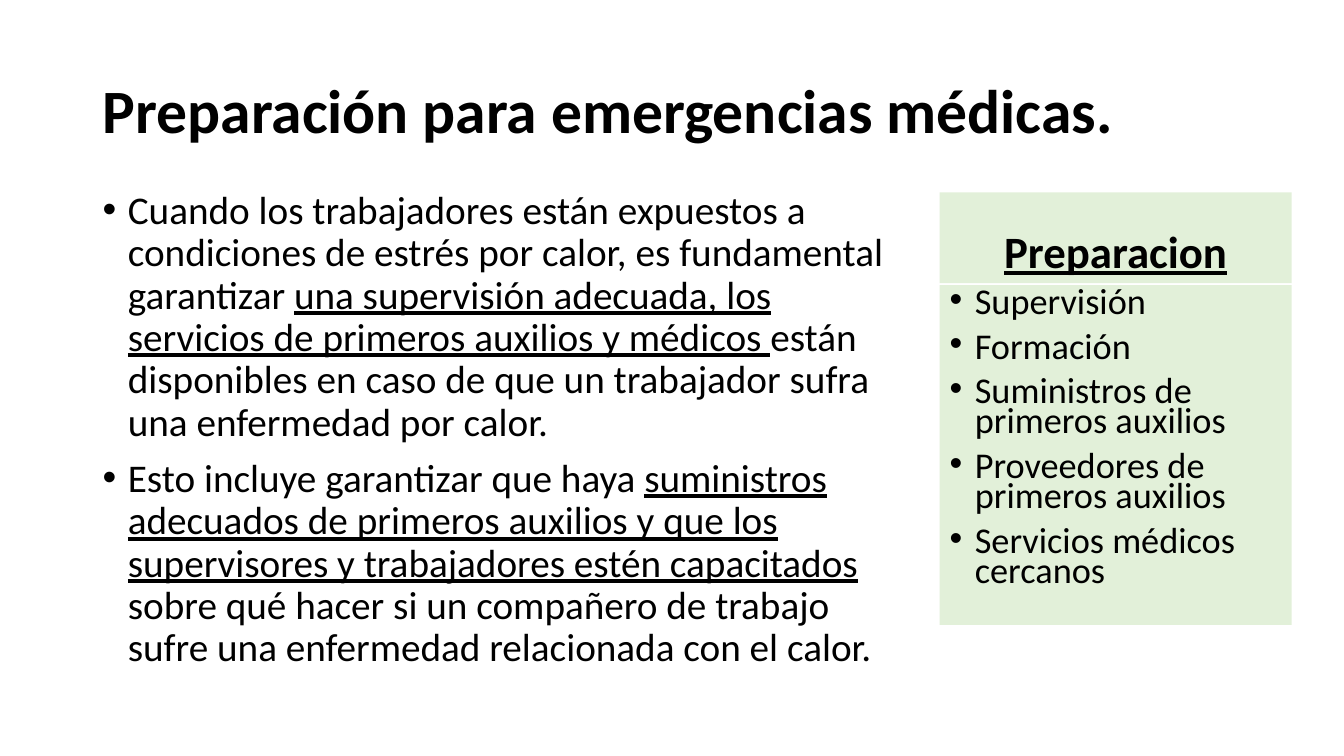
from dataclasses import dataclass

from lxml import etree
from pptx import Presentation
from pptx.dml.color import RGBColor
from pptx.enum import shapes, text
from pptx.oxml.ns import qn
from pptx.util import Inches, Pt

BLACK = RGBColor(0x00, 0x00, 0x00)
PALE_GREEN = RGBColor(0xE2, 0xF0, 0xD9)
FONT = "Calibri"
WIDTH, HEIGHT = 13.33, 7.5
BULLET_INDENT = Inches(0.25)

# Shared grid edges, in inches
LEFT, PANEL_LEFT, PANEL_WIDTH = 0.92, 9.32, 3.49

# A span is its wording and whether it is underlined
Span = tuple[str, bool]


@dataclass(frozen=True)
class Block:
    """A text area with one format for all of its paragraphs."""
    area: tuple[float, float, float, float]
    paragraphs: list[list[Span]]
    size: float
    line_spacing: float = 0.9
    space_before: float = 10
    anchor: text.MSO_ANCHOR = text.MSO_ANCHOR.TOP
    align: text.PP_ALIGN = text.PP_ALIGN.LEFT
    bold: bool = False
    bullets: bool = False
    fill: RGBColor | None = None


PREPARATIONS = [
    "Supervisión",
    "Formación",
    "Suministros de primeros auxilios",
    "Proveedores de primeros auxilios",
    "Servicios médicos cercanos",
]

BLOCKS = [
    # Title
    Block((LEFT, 0.4, 11.5, 1.45),
          [[("Preparación para emergencias médicas.", False)]],
          size=44, space_before=0, anchor=text.MSO_ANCHOR.MIDDLE, bold=True),
    # Main points
    Block((LEFT, 1.84, 8.14, 5.25), [
        [("Cuando los trabajadores están expuestos a condiciones de estrés por calor, "
          "es fundamental garantizar ", False),
         ("una supervisión adecuada, los servicios de primeros auxilios y médicos ", True),
         ("están disponibles en caso de que un trabajador sufra una enfermedad por calor.",
          False)],
        [("Esto incluye garantizar que haya ", False),
         ("suministros adecuados de primeros auxilios y que los supervisores y "
          "trabajadores estén capacitados ", True),
         ("sobre qué hacer si un compañero de trabajo sufre una enfermedad relacionada "
          "con el calor.", False)],
    ], size=28, bullets=True),
    # Side panel: heading and list
    Block((PANEL_LEFT, 1.91, PANEL_WIDTH, 0.9), [[("Preparacion", True)]],
          size=32, anchor=text.MSO_ANCHOR.BOTTOM, align=text.PP_ALIGN.CENTER,
          bold=True, fill=PALE_GREEN),
    Block((PANEL_LEFT, 2.83, PANEL_WIDTH, 3.37),
          [[(item, False)] for item in PREPARATIONS],
          size=25.9, line_spacing=0.7, bullets=True, fill=PALE_GREEN),
]


def set_attributes(target: object, values: dict[str, object]) -> None:
    for name, value in values.items():
        setattr(target, name, value)


def add_bullet(para) -> None:
    properties = para._p.get_or_add_pPr()
    properties.set("marL", str(BULLET_INDENT))
    properties.set("indent", str(-BULLET_INDENT))
    etree.SubElement(properties, qn("a:buFont")).set("typeface", "Arial")
    etree.SubElement(properties, qn("a:buChar")).set("char", "•")


def draw_block(page, block: Block) -> None:
    area = [Inches(length) for length in block.area]
    if block.fill is None:
        box = page.shapes.add_textbox(*area)
    else:
        box = page.shapes.add_shape(shapes.MSO_SHAPE.RECTANGLE, *area)
        box.shadow.inherit = False
        box.fill.solid()
        box.fill.fore_color.rgb = block.fill
        box.line.fill.background()

    frame = box.text_frame
    set_attributes(frame, {"word_wrap": True, "vertical_anchor": block.anchor})
    for index, spans in enumerate(block.paragraphs):
        para = frame.add_paragraph() if index else frame.paragraphs[0]
        set_attributes(para, {
            "alignment": block.align,
            "line_spacing": block.line_spacing,
            "space_before": Pt(block.space_before),
        })
        if block.bullets:
            add_bullet(para)
        for wording, underlined in spans:
            span = para.add_run()
            span.text = wording
            set_attributes(span.font, {
                "name": FONT,
                "size": Pt(block.size),
                "bold": block.bold,
                "underline": underlined,
            })
            span.font.color.rgb = BLACK


def main() -> None:
    deck = Presentation()
    set_attributes(deck, {"slide_width": Inches(WIDTH), "slide_height": Inches(HEIGHT)})
    page = deck.slides.add_slide(deck.slide_layouts[6])
    for block in BLOCKS:
        draw_block(page, block)
    deck.save("out.pptx")


if __name__ == "__main__":
    main()
